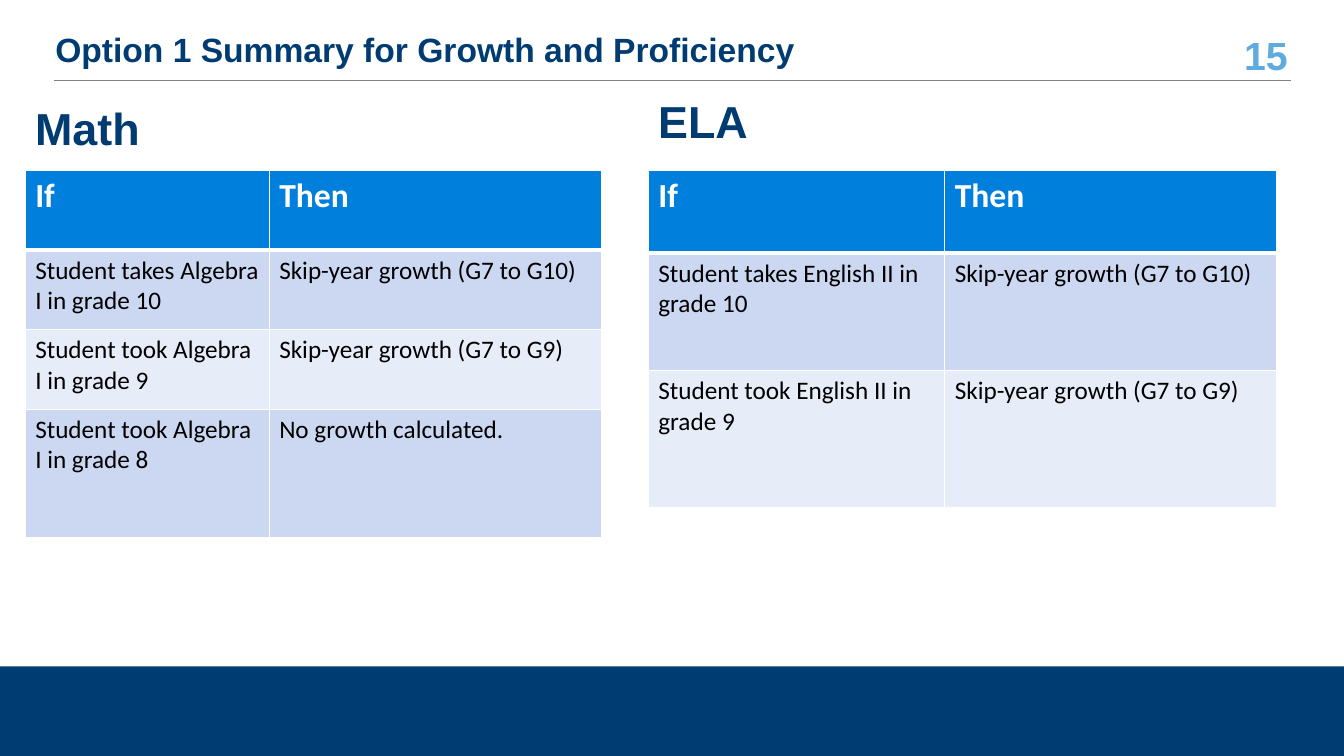
from lxml import etree
from pptx import Presentation, util as u
from pptx.dml.color import RGBColor
from pptx.enum import shapes, text
from pptx.oxml import ns

NAVY, SKY, WHITE = "003B71", "5FAADE", "FFFFFF"
HEADER, BANDS = "007FDC", ("CCD8F2", "E7ECF9")


def color(hex_code):
    return RGBColor.from_string(hex_code)


def add_heading(left, top, width, words, size, hex_code=NAVY, align=text.PP_ALIGN.LEFT, height=0.42):
    box = slide.shapes.add_textbox(*map(u.Inches, (left, top, width, height)))
    frame = box.text_frame
    frame.word_wrap = True
    frame.vertical_anchor = text.MSO_ANCHOR.MIDDLE
    paragraph = frame.paragraphs[0]
    paragraph.text = words
    paragraph.alignment = align
    font = paragraph.font
    font.name, font.size, font.bold = "Arial", u.Pt(size), True
    font.color.rgb = color(hex_code)
    return paragraph


presentation = Presentation()
presentation.slide_width, presentation.slide_height = u.Inches(13.33), u.Inches(7.5)
slide = presentation.slides.add_slide(presentation.slide_layouts[6])

# Footer band
band_top = u.Inches(6.61)
band = slide.shapes.add_shape(shapes.MSO_SHAPE.RECTANGLE, 0, band_top,
                              presentation.slide_width, presentation.slide_height - band_top)
band.shadow.inherit = False
band.fill.solid()
band.fill.fore_color.rgb = color(NAVY)
band.line.fill.background()

# Page number, rule and title
add_heading(12.07, 0.33, 0.8, "15", 28, SKY, text.PP_ALIGN.RIGHT)
rule = slide.shapes.add_connector(shapes.MSO_CONNECTOR.STRAIGHT,
                                  *map(u.Inches, (12.8, 0.8, 0.54, 0.8)))
rule.line.color.rgb = color("808080")
rule.line.width = u.Pt(0.5)
etree.SubElement(rule.element.spPr, ns.qn("a:effectLst"))
title = add_heading(0.45, 0.3, 11.6, "Option 1 Summary for Growth and Proficiency", 24)
title.line_spacing = 0.9

# Subject headings, each above its table of rules
subjects = [
    ("Math", 0.25, 1.04, (2.42, 3.3), (0.79, 0.79, 0.79, 1.27), [
        ("If", "Then"),
        ("Student takes Algebra I in grade 10", "Skip-year growth (G7 to G10)"),
        ("Student took Algebra I in grade 9", "Skip-year growth (G7 to G9)"),
        ("Student took Algebra I in grade 8", "No growth calculated.")]),
    ("ELA", 6.43, 0.97, (2.94, 3.29), (0.82, 1.17, 1.36), [
        ("If", "Then"),
        ("Student takes English II in grade 10", "Skip-year growth (G7 to G10)"),
        ("Student took English II in grade 9", "Skip-year growth (G7 to G9)")]),
]
for subject, left, heading_top, widths, heights, rows in subjects:
    add_heading(left, heading_top, 3.08, subject, 32, height=0.46)
    table = slide.shapes.add_table(len(rows), len(widths), *map(
        u.Inches, (left, 1.69, sum(widths), sum(heights)))).table
    for column, width in zip(table.columns, widths):
        column.width = u.Inches(width)
    for row_index, (height, words) in enumerate(zip(heights, rows)):
        table.rows[row_index].height = u.Inches(height)
        is_header = row_index == 0
        for column_index, phrase in enumerate(words):
            cell = table.cell(row_index, column_index)

            # White borders, heavier between header and body
            heavy_side = {0: "lnB", 1: "lnT"}.get(row_index)
            properties = cell._tc.get_or_add_tcPr()
            for side in ("lnL", "lnR", "lnT", "lnB"):
                points = 3 if side == heavy_side else 1
                border = etree.SubElement(properties, ns.qn(f"a:{side}"), w=str(u.Pt(points)))
                fill = etree.SubElement(border, ns.qn("a:solidFill"))
                etree.SubElement(fill, ns.qn("a:srgbClr"), val=WHITE)

            # Banded fill and cell text
            cell.fill.solid()
            cell.fill.fore_color.rgb = color(HEADER if is_header else BANDS[(row_index - 1) % 2])
            cell.text = phrase
            font = cell.text_frame.paragraphs[0].font
            font.name, font.bold = "Calibri", is_header
            font.size = u.Pt(24 if is_header else 18)
            font.color.rgb = color(WHITE if is_header else "000000")

presentation.save("out.pptx")
